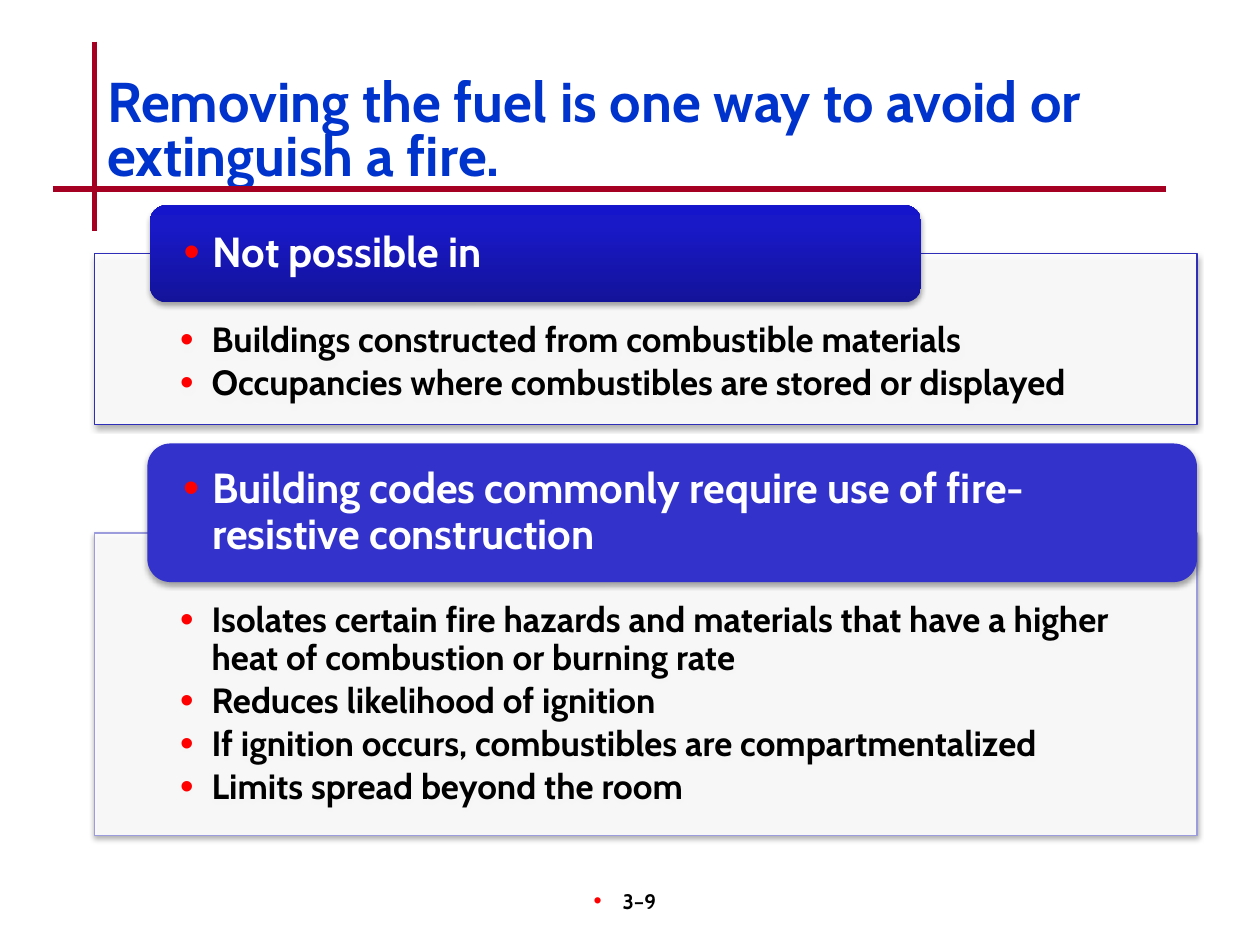
from lxml import etree
from pptx import Presentation
from pptx import util as u
from pptx.dml.color import RGBColor
from pptx.enum import shapes, text
from pptx.oxml import parse_xml
from pptx.oxml.ns import nsdecls, qn

FONT = "Cabin"
TITLE = "Removing the fuel is one way to avoid or extinguish a fire."
PAGE = "3–9"
RULES = [((0.75, 0.33), (0.75, 1.83)), ((0.42, 1.5), (9.25, 1.5))]
GRADIENT = [(0, "13139A"), (80, "1919C8"), (100, "1515CC")]
SECTIONS = [
    {
        "heading": "Not possible in",
        "heading_box": (1.19, 1.63, 6.12, 0.77),
        "heading_fill": GRADIENT,
        "panel_box": (0.75, 2.01, 8.75, 1.36),
        "panel_line": "2E2EB9",
        "points": [
            "Buildings constructed from combustible materials",
            "Occupancies where combustibles are stored or displayed",
        ],
    },
    {
        "heading": "Building codes commonly require use of fire-resistive construction",
        "heading_box": (1.17, 3.52, 8.33, 1.1),
        "heading_fill": "3333CC",
        "panel_box": (0.75, 4.23, 8.75, 2.4),
        "panel_line": "9C9CDD",
        "points": [
            "Isolates certain fire hazards and materials that have a higher heat of combustion or burning rate",
            "Reduces likelihood of ignition",
            "If ignition occurs, combustibles are compartmentalized",
            "Limits spread beyond the room",
        ],
    },
]


def paint(color_format, color):
    color_format.rgb = RGBColor.from_string(color)


def inches(values):
    return [u.Inches(value) for value in values]


def add_bullet(paragraph, hang):
    props = paragraph._p.get_or_add_pPr()
    props.set("marL", str(u.Inches(hang)))
    props.set("indent", str(-u.Inches(hang)))
    color = etree.SubElement(props, qn("a:buClr"))
    etree.SubElement(color, qn("a:srgbClr"), val="FF0000")
    etree.SubElement(props, qn("a:buSzPct"), val="110000")
    etree.SubElement(props, qn("a:buFont"), typeface="Arial")
    etree.SubElement(props, qn("a:buChar"), char="•")


def write(frame, lines, size, color, align=text.PP_ALIGN.LEFT, spacing=1.0,
          after=0, hang=0):
    frame.word_wrap = True
    frame.text = "\n".join(lines)
    for paragraph in frame.paragraphs:
        paragraph.alignment = align
        paragraph.line_spacing = spacing
        paragraph.space_before = u.Pt(0)
        paragraph.space_after = u.Pt(after)
        if hang:
            add_bullet(paragraph, hang)
        for run in paragraph.runs:
            run.font.name = FONT
            run.font.size = u.Pt(size)
            run.font.bold = True
            paint(run.font.color, color)


def set_insets(frame, left, top, right, bottom):
    frame.margin_left, frame.margin_top = inches((left, top))
    frame.margin_right, frame.margin_bottom = inches((right, bottom))


def add_shadow(shape):
    shape._element.spPr.append(parse_xml(
        f'<a:effectLst {nsdecls("a")}><a:outerShdw blurRad="{u.Pt(3.1)}" '
        f'dist="{u.Pt(1.8)}" dir="5400000" rotWithShape="0">'
        '<a:srgbClr val="000000"><a:alpha val="35000"/></a:srgbClr>'
        '</a:outerShdw></a:effectLst>'))


def fill_gradient(shape, stops):
    marks = "".join(f'<a:gs pos="{pos * 1000}"><a:srgbClr val="{color}"/></a:gs>'
                    for pos, color in stops)
    shape._element.spPr.find(qn("a:prstGeom")).addnext(parse_xml(
        f'<a:gradFill {nsdecls("a")} rotWithShape="1"><a:gsLst>{marks}</a:gsLst>'
        '<a:lin ang="16200000" scaled="0"/></a:gradFill>'))


def add_panel(slide, section):
    panel = slide.shapes.add_shape(shapes.MSO_SHAPE.RECTANGLE,
                                   *inches(section["panel_box"]))
    panel.fill.solid()
    paint(panel.fill.fore_color, "FFFFFF")
    white = panel._element.spPr.find(qn("a:solidFill"))[0]
    etree.SubElement(white, qn("a:alpha"), val="90000")
    paint(panel.line.color, section["panel_line"])
    panel.line.width = u.Pt(0.75)
    add_shadow(panel)
    frame = panel.text_frame
    frame.vertical_anchor = text.MSO_ANCHOR.TOP
    set_insets(frame, 0.68, 0.55, 0.68, 0.16)
    write(frame, section["points"], 20, "000000", spacing=0.9, after=3, hang=0.25)


def add_heading(slide, section):
    heading = slide.shapes.add_shape(shapes.MSO_SHAPE.ROUNDED_RECTANGLE,
                                     *inches(section["heading_box"]))
    fill = section["heading_fill"]
    if isinstance(fill, str):
        heading.fill.solid()
        paint(heading.fill.fore_color, fill)
    else:
        fill_gradient(heading, fill)
    heading.line.fill.background()
    add_shadow(heading)
    frame = heading.text_frame
    frame.vertical_anchor = text.MSO_ANCHOR.MIDDLE
    set_insets(frame, 0.23, 0, 0.23, 0)
    write(frame, [section["heading"]], 24, "FFFFFF", spacing=0.9, hang=0.23)


def add_rule(slide, start, end):
    rule = slide.shapes.add_connector(shapes.MSO_CONNECTOR.STRAIGHT,
                                      *inches(start + end))
    paint(rule.line.color, "A50021")
    rule.line.width = u.Pt(3)
    etree.SubElement(rule._element.spPr, qn("a:effectLst"))


def main():
    deck = Presentation()
    deck.slide_width, deck.slide_height = inches((10, 7.5))
    slide = deck.slides.add_slide(deck.slide_layouts[5])

    title = slide.shapes.title
    title.left, title.top, title.width, title.height = inches((0.75, 0.56, 8.5, 1))
    title.text_frame.vertical_anchor = text.MSO_ANCHOR.MIDDLE
    write(title.text_frame, [TITLE], 32, "0033CC", spacing=0.8)
    title.text_frame.auto_size = text.MSO_AUTO_SIZE.NONE

    for start, end in RULES:
        add_rule(slide, start, end)
    for section in SECTIONS:
        add_panel(slide, section)
        add_heading(slide, section)

    page = slide.shapes.add_textbox(*inches((3.92, 7, 2.08, 0.5)))
    write(page.text_frame, [PAGE], 12, "000000", text.PP_ALIGN.CENTER, hang=0.23)
    deck.save("out.pptx")


if __name__ == "__main__":
    main()
